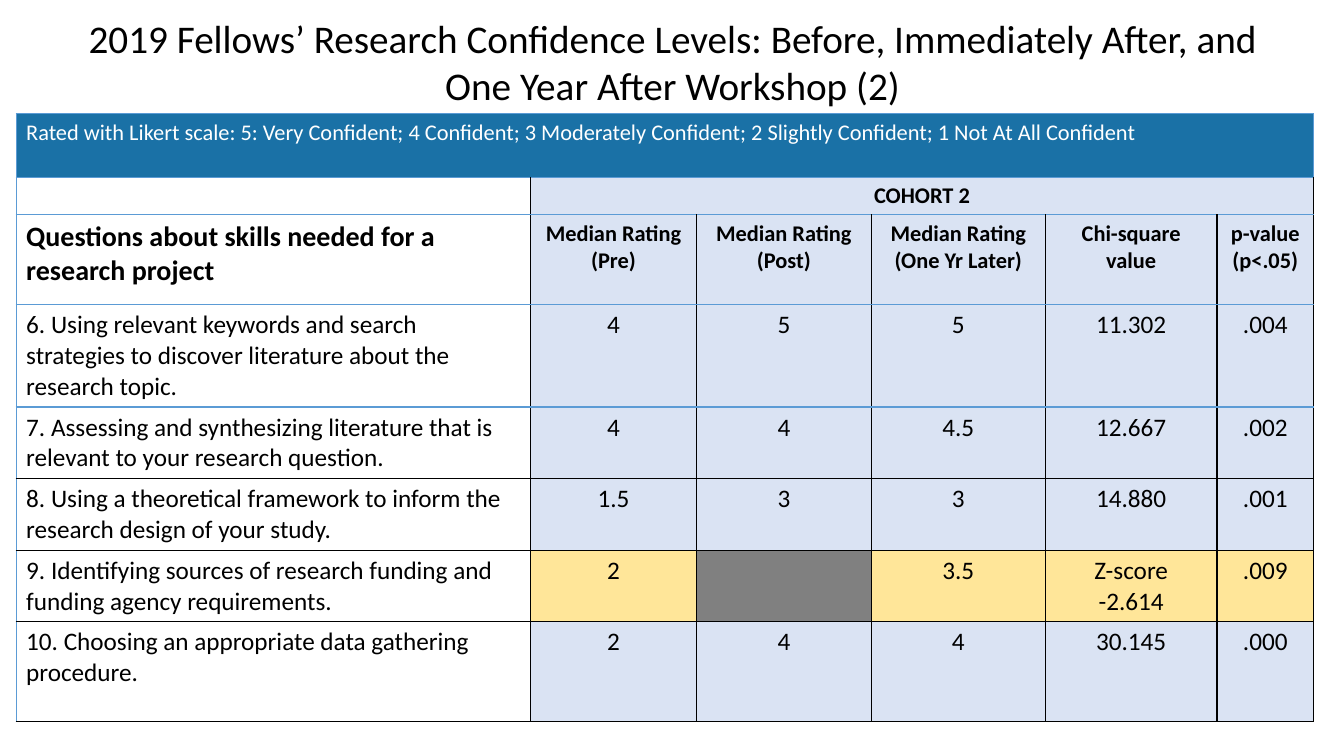
from dataclasses import dataclass

from lxml import etree
from pptx import Presentation
from pptx.dml.color import RGBColor
from pptx.enum.text import MSO_ANCHOR, PP_ALIGN
from pptx.oxml.ns import qn
from pptx.util import Inches, Pt


@dataclass(frozen=True)
class Theme:
    font: str = "Calibri"
    black: str = "000000"
    white: str = "FFFFFF"
    banner: str = "1A71A6"
    rule: str = "5B9BD5"
    rating: str = "DAE3F3"
    highlight: str = "FFE699"
    missing: str = "808080"
    title_size: int = 28
    question_size: int = 20
    body_size: int = 18
    label_size: int = 16


THEME = Theme()


def style_paragraph(paragraph, size, color, bold, alignment):
    paragraph.alignment = alignment
    paragraph.font.name = THEME.font
    paragraph.font.size = Pt(size)
    paragraph.font.bold = bold
    paragraph.font.color.rgb = RGBColor.from_string(color)


def add_border(cell, side, color):
    properties = cell._tc.get_or_add_tcPr()
    line = etree.SubElement(properties, qn(f"a:ln{side}"), w=str(Pt(1)))
    solid = etree.SubElement(line, qn("a:solidFill"))
    etree.SubElement(solid, qn("a:srgbClr"), val=color)


presentation = Presentation()
presentation.slide_width = Inches(13.33)
presentation.slide_height = Inches(7.5)
slide = presentation.slides.add_slide(presentation.slide_layouts[5])

# Title
title = slide.shapes.title
title.left, title.top = Inches(0.32), Inches(0.09)
title.width, title.height = Inches(12.7), Inches(1.04)
title.text_frame.text = (
    "2019 Fellows’ Research Confidence Levels: Before, Immediately After, and\v"
    "One Year After Workshop (2)"
)
title.text_frame.vertical_anchor = MSO_ANCHOR.MIDDLE
style_paragraph(title.text_frame.paragraphs[0], THEME.title_size, THEME.black,
                False, PP_ALIGN.CENTER)

# Table contents: banner, cohort, column headings, then one row per question
rows = [
    ["Rated with Likert scale: 5: Very Confident; 4 Confident; 3 Moderately Confident; "
     "2 Slightly Confident; 1 Not At All Confident", "", "", "", "", ""],
    ["", "COHORT 2", "", "", "", ""],
    ["Questions about skills needed for a research project", "Median Rating\n(Pre)",
     "Median Rating\n(Post)", "Median Rating\n(One Yr Later)", "Chi-square value",
     "p-value (p<.05)"],
    ["6. Using relevant keywords and search strategies to discover literature about "
     "the research topic.", "4", "5", "5", "11.302", ".004"],
    ["7. Assessing and synthesizing literature that is relevant to your research question.",
     "4", "4", "4.5", "12.667", ".002"],
    ["8. Using a theoretical framework to inform the research design of your study.",
     "1.5", "3", "3", "14.880", ".001"],
    ["9. Identifying sources of research funding and funding agency requirements.",
     "2", "", "3.5", "Z-score\n-2.614", ".009"],
    ["10. Choosing an appropriate data gathering procedure.",
     "2", "4", "4", "30.145", ".000"],
]
column_widths = [5.1, 1.65, 1.73, 1.73, 1.7, 0.96]
row_heights = [0.63, 0.36, 0.89, 0.96, 0.69, 0.69, 0.69, 0.99]
BANNER, COHORT, HEADINGS, FUNDING = 0, 1, 2, 6
LAST_BLUE_RULE = 4

# Table frame
table = slide.shapes.add_table(
    len(rows), len(column_widths), Inches(0.16), Inches(1.13),
    Inches(sum(column_widths)), Inches(sum(row_heights))).table
table.first_row = False
table.horz_banding = False
for column, width in zip(table.columns, column_widths):
    column.width = Inches(width)
for row, height in zip(table.rows, row_heights):
    row.height = Inches(height)
table.cell(BANNER, 0).merge(table.cell(BANNER, 5))
table.cell(COHORT, 1).merge(table.cell(COHORT, 5))

# Cells
for row_index, texts in enumerate(rows):
    is_banner = row_index == BANNER
    for column_index, text in enumerate(texts):
        cell = table.cell(row_index, column_index)
        is_question = column_index == 0

        # Text
        cell.text = text
        if row_index > HEADINGS:
            size = THEME.body_size
        elif row_index == HEADINGS and is_question:
            size = THEME.question_size
        else:
            size = THEME.label_size
        for paragraph in cell.text_frame.paragraphs:
            style_paragraph(
                paragraph, size, THEME.white if is_banner else THEME.black,
                row_index in (COHORT, HEADINGS),
                PP_ALIGN.LEFT if is_question else PP_ALIGN.CENTER)

        # Borders
        add_border(cell, "L", THEME.rule if is_question or is_banner else THEME.black)
        add_border(cell, "R", THEME.rule if is_banner else THEME.black)
        add_border(cell, "T", THEME.rule if row_index <= LAST_BLUE_RULE else THEME.black)
        add_border(cell, "B", THEME.rule if row_index < LAST_BLUE_RULE else THEME.black)

        # Fill
        if is_banner:
            fill = THEME.banner
        elif is_question:
            cell.fill.background()
            continue
        elif row_index == FUNDING:
            fill = THEME.highlight if text else THEME.missing
        else:
            fill = THEME.rating
        cell.fill.solid()
        cell.fill.fore_color.rgb = RGBColor.from_string(fill)

presentation.save("out.pptx")
